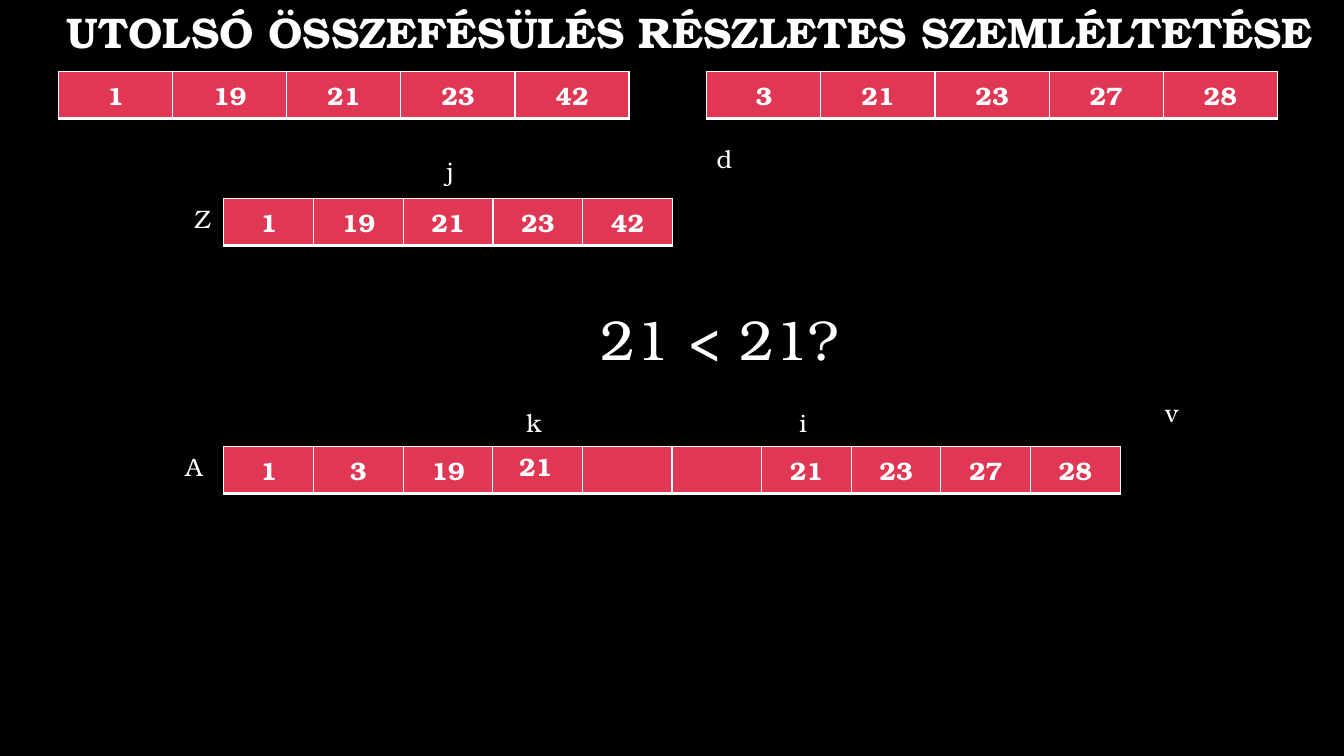
import pptx
import pptx.dml.color
import pptx.enum.text
import pptx.oxml
import pptx.oxml.ns
import pptx.util

Inches = pptx.util.Inches
FONT = "TeX Gyre Bonum"
WHITE, RED, BLACK = "FFFFFF", "E03754", "000000"
CENTER = pptx.enum.text.PP_ALIGN.CENTER


def rgb(value):
    return pptx.dml.color.RGBColor.from_string(value)


def add_run(p, text, size, bold=False):
    r = p.add_run()
    r.text = text
    r.font.name = FONT
    r.font.size = pptx.util.Pt(size)
    r.font.bold = bold
    r.font.color.rgb = rgb(WHITE)


prs = pptx.Presentation()
prs.slide_width, prs.slide_height = Inches(13.33), Inches(7.5)
s = prs.slides.add_slide(prs.slide_layouts[5])
s.background.fill.solid()
s.background.fill.fore_color.rgb = rgb(BLACK)

# Title
title = s.shapes.title
title.left, title.top = Inches(0.22), Inches(0)
title.width, title.height = Inches(13.23), Inches(0.68)
tf = title.text_frame
tf.auto_size = pptx.enum.text.MSO_AUTO_SIZE.NONE
tf.vertical_anchor = pptx.enum.text.MSO_ANCHOR.MIDDLE
p = tf.paragraphs[0]
p.alignment = CENTER
p.line_spacing = 0.9
add_run(p, "UTOLSÓ ÖSSZEFÉSÜLÉS RÉSZLETES SZEMLÉLTETÉSE", 30.6, True)

# Arrays: left, top, total width, values
left_half = ["1", "19", "21", "23", "42"]
right_half = ["3", "21", "23", "27", "28"]
arrays = [
    (0.58, 0.71, 5.66, left_half),
    (7.01, 0.71, 5.66, right_half),
    (2.22, 1.97, 4.45, left_half),
    (2.22, 4.43, 8.89, ["1", "3", "19", "", "", "", "21", "23", "27", "28"]),
]
for left, top, width, values in arrays:
    frame = s.shapes.add_table(1, len(values), Inches(left), Inches(top),
                               Inches(width), Inches(0.41))
    table = frame.table
    table.first_row = table.horz_banding = False
    for cell, value in zip(table.rows[0].cells, values):
        p = cell.text_frame.paragraphs[0]
        p.alignment = CENTER
        if value:
            add_run(p, value, 18, True)
        # Cell borders come before the fill in the cell properties
        tcPr = cell._tc.get_or_add_tcPr()
        for side, points in (("L", 1), ("R", 1), ("T", 1), ("B", 3)):
            tcPr.append(pptx.oxml.parse_xml(
                f'<a:ln{side} {pptx.oxml.ns.nsdecls("a")} w="{pptx.util.Pt(points)}">'
                f'<a:solidFill><a:srgbClr val="{WHITE}"/></a:solidFill></a:ln{side}>'))
        cell.fill.solid()
        cell.fill.fore_color.rgb = rgb(RED)

# Array names, index markers, moving value and comparison
labels = [
    ("Z", 1.83, 1.97, 0.39, 0.4, 18, False),
    ("A", 1.74, 4.43, 0.39, 0.4, 18, False),
    ("i", 7.83, 3.99, 0.94, 0.4, 18, False),
    ("j", 4.33, 1.49, 0.94, 0.4, 18, False),
    ("21", 5.05, 4.43, 0.81, 0.4, 18, True),
    ("21 < 21?", 5.86, 2.97, 4.29, 0.77, 40, False),
    ("k", 5.12, 3.99, 0.94, 0.4, 18, False),
    ("d", 7.01, 1.37, 0.94, 0.4, 18, False),
    ("v", 11.46, 3.89, 0.94, 0.4, 18, False),
]
for text, left, top, width, height, size, bold in labels:
    sp = s.shapes.add_textbox(Inches(left), Inches(top), Inches(width), Inches(height))
    tf = sp.text_frame
    tf.word_wrap = True
    tf.auto_size = pptx.enum.text.MSO_AUTO_SIZE.SHAPE_TO_FIT_TEXT
    add_run(tf.paragraphs[0], text, size, bold)

prs.save("out.pptx")
